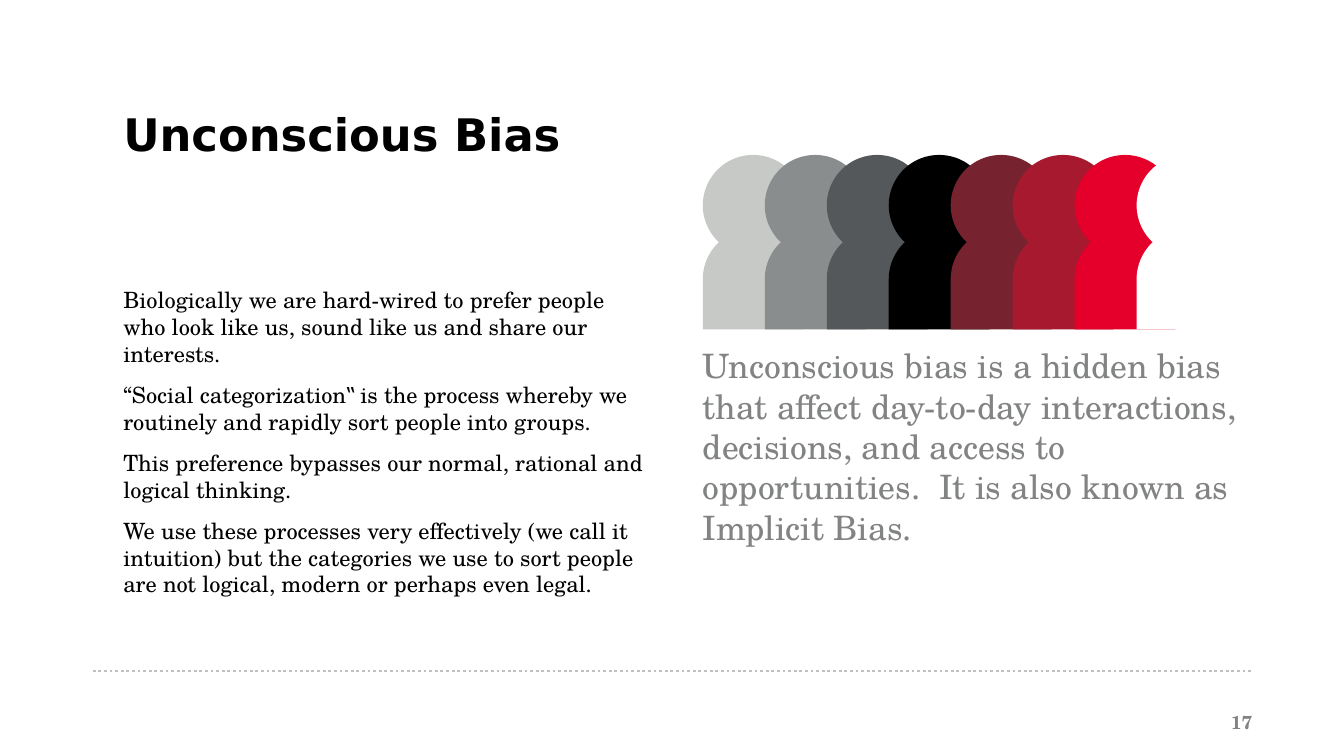
import dataclasses

import lxml.etree
import pptx
import pptx.dml.color
import pptx.enum.dml
import pptx.enum.shapes
import pptx.enum.text
import pptx.oxml.ns
import pptx.util

Pt = pptx.util.Pt
Shape = pptx.enum.shapes.MSO_SHAPE
Align = pptx.enum.text.PP_ALIGN
Anchor = pptx.enum.text.MSO_ANCHOR


@dataclasses.dataclass(frozen=True)
class Theme:
    heading_font: str = "DejaVu Sans"
    text_font: str = "TeX Gyre Schola"
    title_size: float = 24
    lead_size: float = 18
    body_size: float = 12
    number_size: float = 10
    ink: str = "000000"
    muted: str = "828383"
    rule: str = "C0C0C0"
    people: tuple = ("C7C9C7", "898D8D", "54585A", "000000",
                     "76232F", "A6192E", "E4002B", "FFFFFF")


def rgb(value):
    return pptx.dml.color.RGBColor.from_string(value)


def write_paragraph(para, text, *, font, size, color, bold=False,
                    align=Align.LEFT, before=0, spacing=1.0):
    para.alignment = align
    para.space_before = Pt(before)
    para.line_spacing = spacing
    span = para.add_run()
    span.text = text
    span.font.name = font
    span.font.size = Pt(size)
    span.font.bold = bold
    span.font.color.rgb = rgb(color)


class SlideBuilder:
    """Draws styled elements on the current slide."""

    def __init__(self, page, theme):
        self.page = page
        self.theme = theme

    def text(self, left, top, width, height, paragraphs, *,
             insets=(7.2, 3.6, 7.2, 3.6), anchor=Anchor.TOP, gap=0, **style):
        box = self.page.shapes.add_textbox(Pt(left), Pt(top), Pt(width), Pt(height))
        frame = box.text_frame
        frame.word_wrap = True
        frame.vertical_anchor = anchor
        (frame.margin_left, frame.margin_top,
         frame.margin_right, frame.margin_bottom) = map(Pt, insets)
        for index, text in enumerate(paragraphs):
            para = frame.add_paragraph() if index else frame.paragraphs[0]
            write_paragraph(para, text, before=gap if index else 0, **style)

    def dotted_rule(self, left, right, top):
        line = self.page.shapes.add_connector(
            pptx.enum.shapes.MSO_CONNECTOR.STRAIGHT, Pt(left), Pt(top), Pt(right), Pt(top))
        line.line.color.rgb = rgb(self.theme.rule)
        line.line.width = Pt(1.5)
        line.line.dash_style = pptx.enum.dml.MSO_LINE.ROUND_DOT
        properties = line._element.spPr
        lxml.etree.SubElement(properties, pptx.oxml.ns.qn("a:effectLst"))

    def person(self, group, left, top, size, shoulder_drop, color):
        parts = ((Shape.FLOWCHART_DELAY, shoulder_drop, 270), (Shape.OVAL, 0, 0))
        for kind, drop, rotation in parts:
            part = group.shapes.add_shape(kind, Pt(left), Pt(top + drop), Pt(size), Pt(size))
            part.rotation = rotation
            part.shadow.inherit = False
            part.fill.solid()
            part.fill.fore_color.rgb = rgb(color)
            part.line.fill.background()

    def people_row(self, left, top, size, step, shoulder_drop):
        group = self.page.shapes.add_group_shape()
        for index, color in enumerate(self.theme.people):
            self.person(group, left + index * step, top, size, shoulder_drop, color)


def main():
    deck = pptx.Presentation()
    deck.slide_width, deck.slide_height = Pt(720), Pt(405)
    page = deck.slides.add_slide(deck.slide_layouts[6])
    theme = Theme()
    builder = SlideBuilder(page, theme)

    builder.dotted_rule(49.7, 671, 359.5)
    builder.text(516, 376, 162, 21.6, ["17"], anchor=Anchor.MIDDLE,
                 font=theme.text_font, size=theme.number_size, color=theme.muted,
                 bold=True, align=Align.RIGHT)
    builder.text(59, 60.5, 247, 59, ["Unconscious Bias"], insets=(7.2, 0, 0, 0),
                 font=theme.heading_font, size=theme.title_size, color=theme.ink,
                 bold=True, spacing=0.9)
    builder.text(59, 150, 296, 166, [
        "Biologically we are hard-wired to prefer people who look like us, "
        "sound like us and share our interests.",
        "“Social categorization‟ is the process whereby we routinely and "
        "rapidly sort people into groups.",
        "This preference bypasses our normal, rational and logical thinking.",
        "We use these processes very effectively (we call it intuition) but the "
        "categories we use to sort people are not logical, modern or perhaps even legal.",
    ], gap=7.5, font=theme.text_font, size=theme.body_size, color=theme.ink)
    builder.text(376.5, 185, 287, 105, [
        "Unconscious bias is a hidden bias that affect day-to-day interactions, "
        "decisions, and access to opportunities.  It is also known as Implicit Bias.",
    ], insets=(0, 0, 0, 0), font=theme.text_font, size=theme.lead_size, color=theme.muted)
    builder.people_row(left=376.5, top=83, size=54, step=33.2, shoulder_drop=39.5)

    deck.save("out.pptx")


if __name__ == "__main__":
    main()
